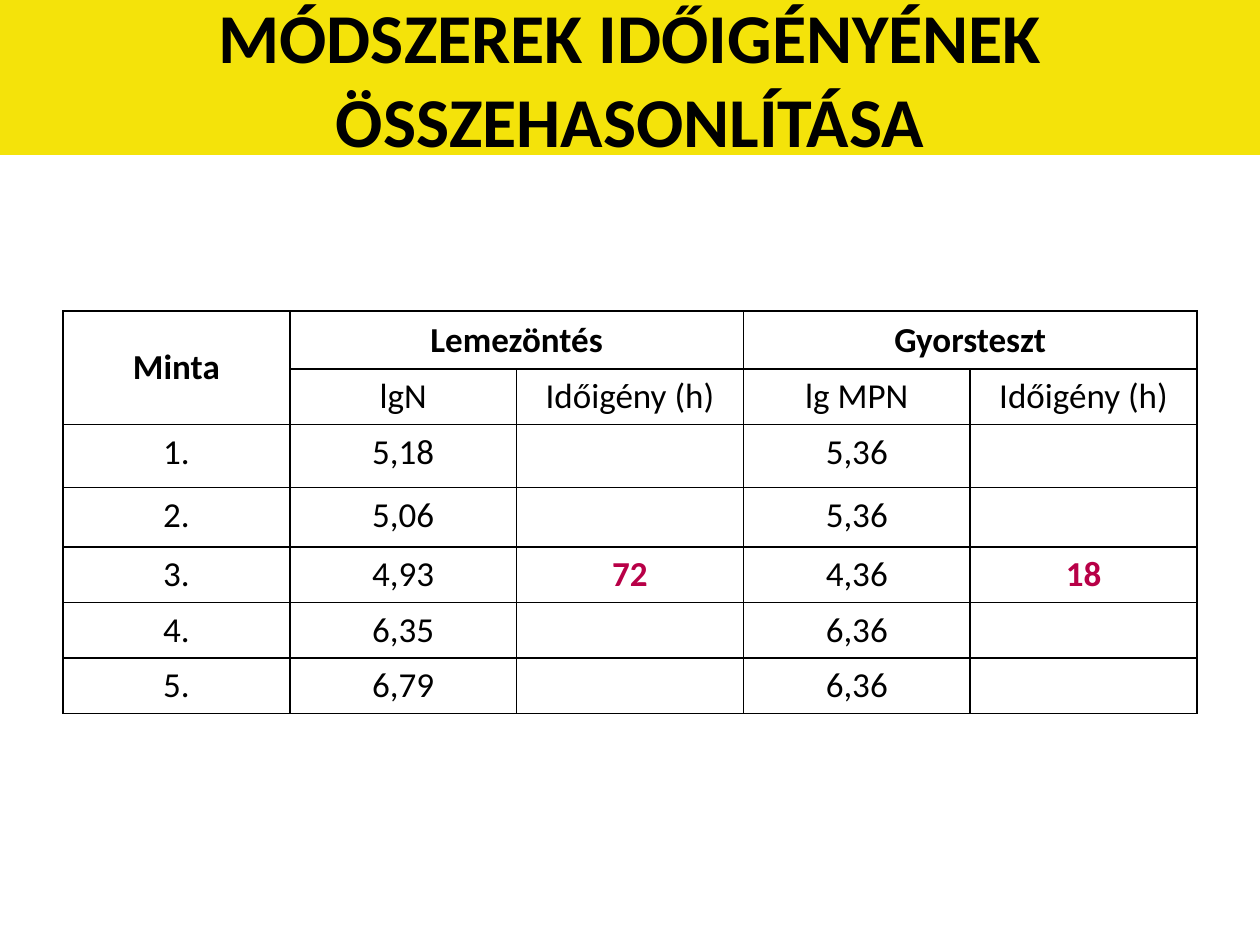
import lxml.etree
import pptx
import pptx.dml.color
import pptx.enum.shapes
import pptx.enum.text
import pptx.oxml.ns
import pptx.util

Inches = pptx.util.Inches
MIDDLE = pptx.enum.text.MSO_ANCHOR.MIDDLE
TOP = pptx.enum.text.MSO_ANCHOR.TOP
BLACK = "000000"
YELLOW = "F4E30A"
CRIMSON = "B80047"

HEADER_ROWS = 2
COLUMN_WIDTH = 1.8
ROW_HEIGHTS = [0.46, 0.44, 0.5, 0.47, 0.44, 0.44, 0.44]
ROWS = [
    ["Minta", "Lemezöntés", "", "Gyorsteszt", ""],
    ["", "lgN", "Időigény (h)", "lg MPN", "Időigény (h)"],
    ["1.", "5,18", "", "5,36", ""],
    ["2.", "5,06", "", "5,36", ""],
    ["3.", "4,93", "72", "4,36", "18"],
    ["4.", "6,35", "", "6,36", ""],
    ["5.", "6,79", "", "6,36", ""],
]
MERGES = [((0, 0), (1, 0)), ((0, 1), (0, 2)), ((0, 3), (0, 4))]
TIME_COLUMNS = (2, 4)


def color(value):
    return pptx.dml.color.RGBColor.from_string(value)


class SlideBuilder:
    """Holds the text style and the slide, and adds elements to it."""

    font_name = "Calibri"

    def __init__(self, slide):
        self.slide = slide

    def set_text(self, text_frame, text, size, bold, font_color=BLACK):
        text_frame.text = text
        paragraph = text_frame.paragraphs[0]
        paragraph.alignment = pptx.enum.text.PP_ALIGN.CENTER
        for run in paragraph.runs:
            run.font.name = self.font_name
            run.font.size = pptx.util.Pt(size)
            run.font.bold = bold
            run.font.color.rgb = color(font_color)

    def title_band(self, text, width, height):
        shape = self.slide.shapes.add_shape(
            pptx.enum.shapes.MSO_SHAPE.RECTANGLE, 0, 0, Inches(width), Inches(height)
        )
        shape.shadow.inherit = False
        shape.fill.solid()
        shape.fill.fore_color.rgb = color(YELLOW)
        shape.line.fill.background()
        shape.text_frame.word_wrap = True
        shape.text_frame.vertical_anchor = MIDDLE
        self.set_text(shape.text_frame, text, 40, True)

    def border(self, cell):
        properties = cell._tc.get_or_add_tcPr()
        for index, side in enumerate(("lnL", "lnR", "lnT", "lnB")):
            line = lxml.etree.Element(pptx.oxml.ns.qn("a:" + side), w=str(pptx.util.Pt(1)))
            fill = lxml.etree.SubElement(line, pptx.oxml.ns.qn("a:solidFill"))
            lxml.etree.SubElement(fill, pptx.oxml.ns.qn("a:srgbClr"), val=BLACK)
            properties.insert(index, line)

    def table(self, left, top):
        columns = len(ROWS[0])
        frame = self.slide.shapes.add_table(
            len(ROWS), columns, Inches(left), Inches(top),
            Inches(columns * COLUMN_WIDTH), Inches(sum(ROW_HEIGHTS)),
        )
        table = frame.table
        table.first_row = False
        table.horz_banding = False
        for column in table.columns:
            column.width = Inches(COLUMN_WIDTH)
        for row, height in zip(table.rows, ROW_HEIGHTS):
            row.height = Inches(height)
        for row_index, texts in enumerate(ROWS):
            for column_index, text in enumerate(texts):
                cell = table.cell(row_index, column_index)
                is_header = row_index < HEADER_ROWS
                is_time = not is_header and column_index in TIME_COLUMNS
                cell.fill.background()
                cell.vertical_anchor = MIDDLE if is_header else TOP
                self.set_text(
                    cell.text_frame, text, 20, row_index == 0 or is_time,
                    CRIMSON if is_time else BLACK,
                )
                self.border(cell)
        for first, last in MERGES:
            table.cell(*first).merge(table.cell(*last))


def main():
    presentation = pptx.Presentation()
    presentation.slide_width = Inches(10)
    presentation.slide_height = Inches(7.5)
    builder = SlideBuilder(presentation.slides.add_slide(presentation.slide_layouts[6]))
    builder.title_band("MÓDSZEREK IDŐIGÉNYÉNEK ÖSSZEHASONLÍTÁSA", 10, 1.23)
    builder.table(0.5, 2.47)
    presentation.save("out.pptx")


if __name__ == "__main__":
    main()
